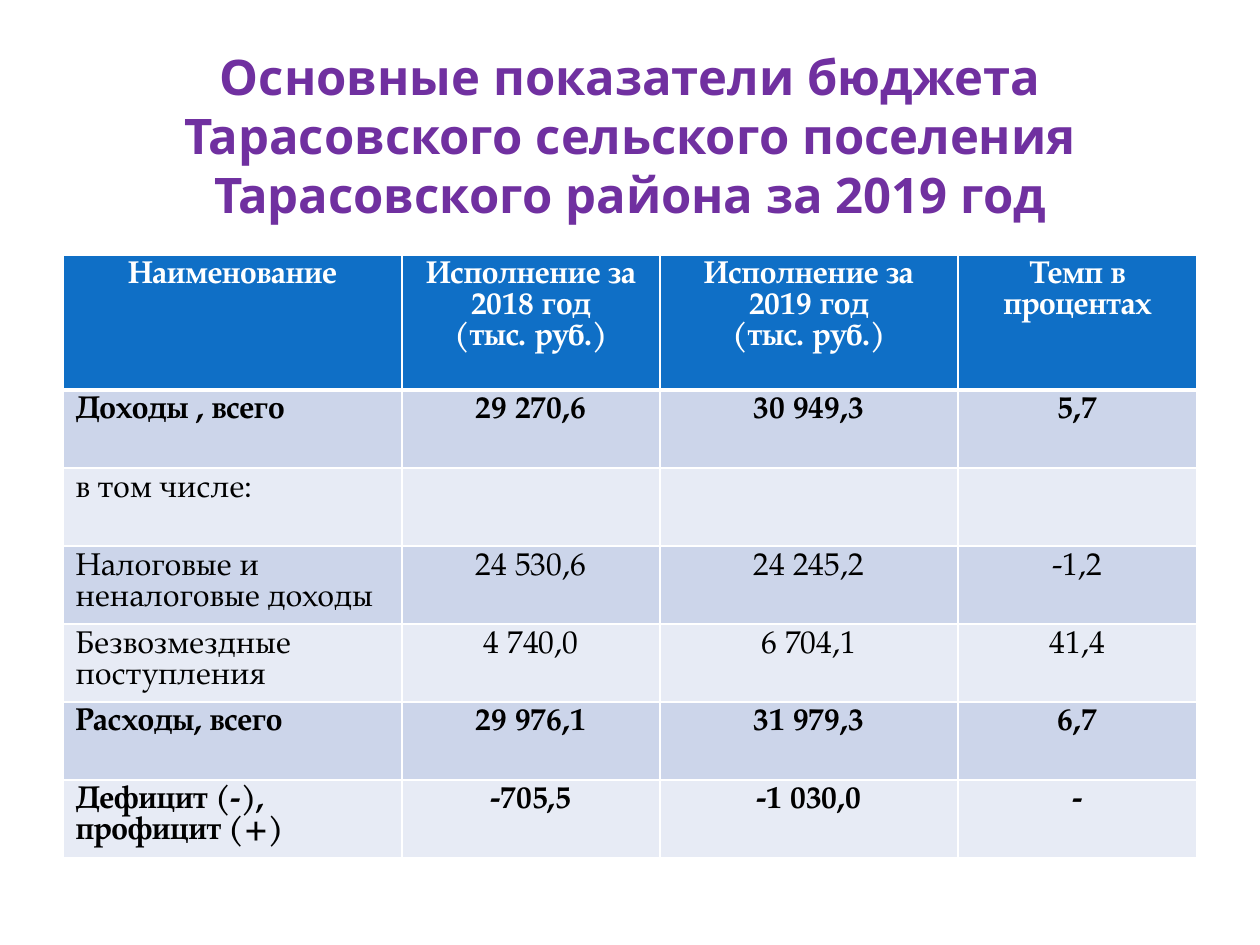
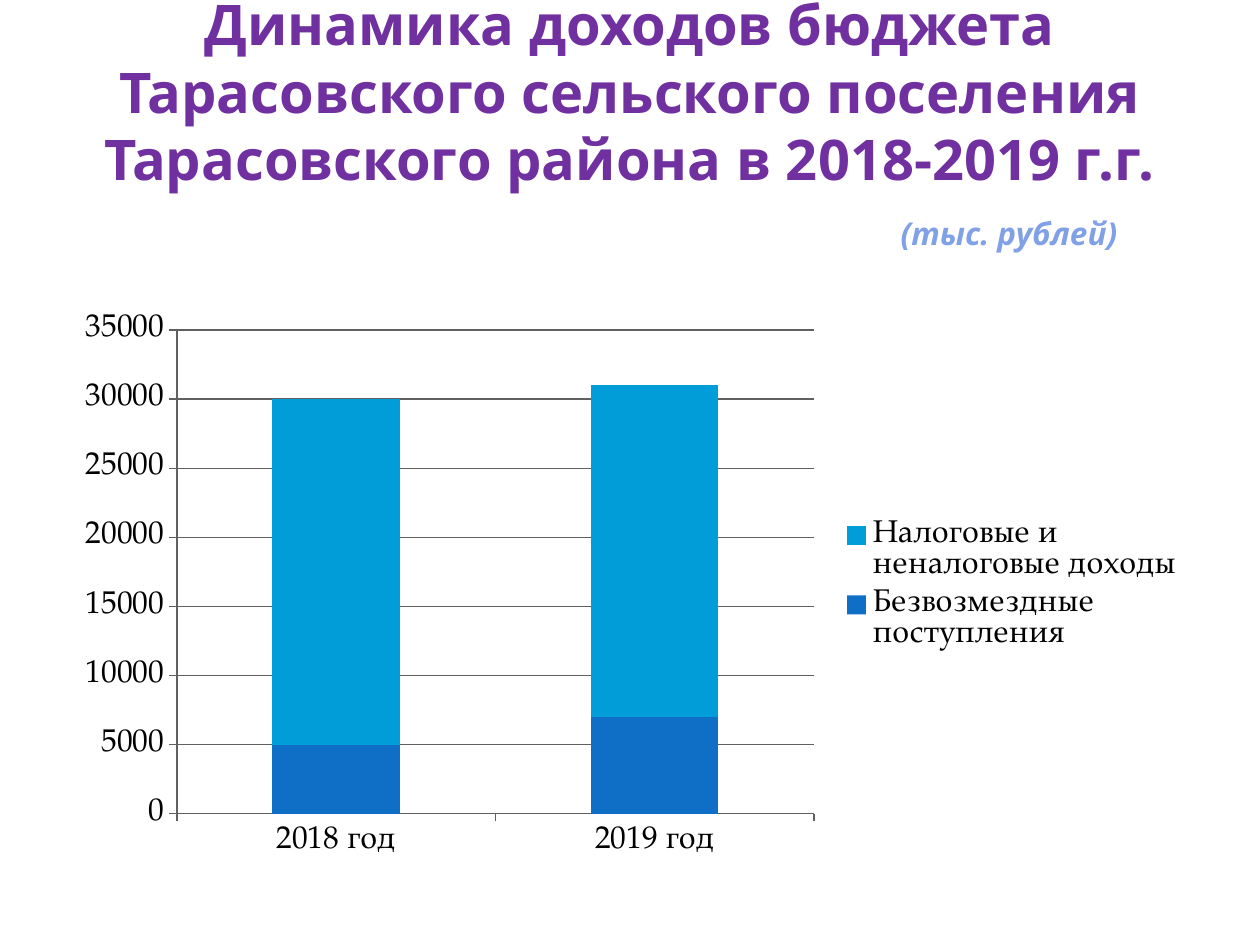
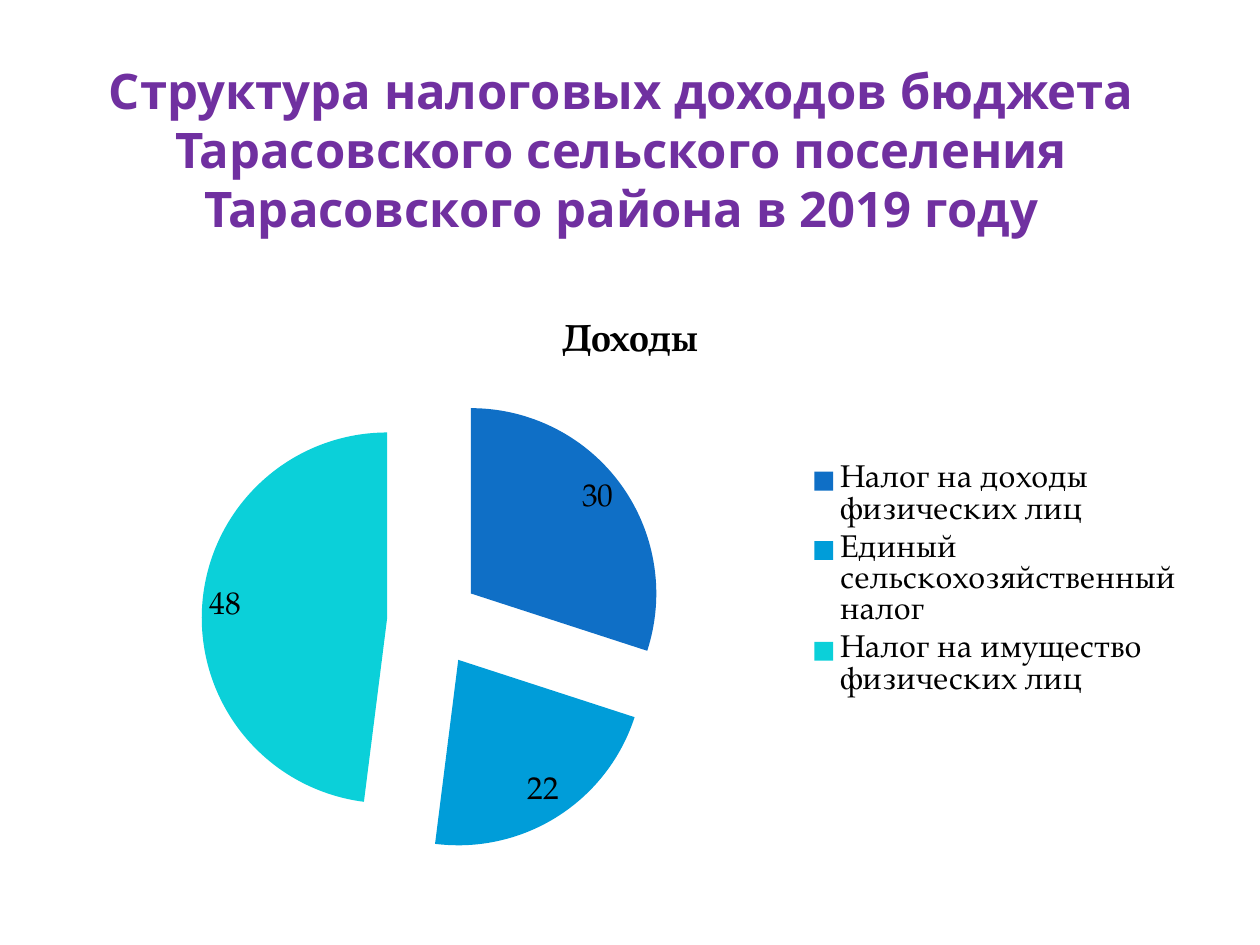
"""Builds three slides on the budget of the Tarasovskoe rural settlement."""
from lxml import etree
from pptx import Presentation
from pptx import util as u
from pptx.chart import data as chart_data
from pptx.dml.color import RGBColor
from pptx.enum import chart as ch
from pptx.enum import text
from pptx.oxml import ns

PURPLE = RGBColor(0x70, 0x30, 0xA0)
PERIWINKLE = RGBColor(0x81, 0xA1, 0xE7)
BLUE = RGBColor(0x0F, 0x6F, 0xC6)
SKY = RGBColor(0x00, 0x9D, 0xD9)
TURQUOISE = RGBColor(0x0B, 0xD0, 0xD9)
BAND_DARK = RGBColor(0xCC, 0xD5, 0xEA)
BAND_LIGHT = RGBColor(0xE7, 0xEB, 0xF5)
AXIS_GREY = RGBColor(0x60, 0x60, 0x60)
WHITE = RGBColor(0xFF, 0xFF, 0xFF)
BLACK = RGBColor(0, 0, 0)

TITLE_FONT = "Noto Sans"
BODY_FONT = "TeX Gyre Pagella"
BODY_SIZE = 18
PX_PER_INCH = 126


def px(length):
    return u.Emu(round(length * 914400 / PX_PER_INCH))


def style(font, name, size, color, bold=False, italic=False):
    font.name, font.size = name, u.Pt(size)
    font.bold, font.italic = bold, italic
    font.color.rgb = color


class Deck:
    def __init__(self):
        self.prs = Presentation()
        self.prs.slide_width, self.prs.slide_height = px(1260), px(945)
        self.slide = None

    def new_slide(self):
        self.slide = self.prs.slides.add_slide(self.prs.slide_layouts[6])

    def title(self, box, wording, size=28):
        frame = self.slide.shapes.add_textbox(*map(px, box)).text_frame
        frame.word_wrap = True
        frame.auto_size = text.MSO_AUTO_SIZE.NONE
        frame.vertical_anchor = text.MSO_ANCHOR.MIDDLE
        heading = frame.paragraphs[0]
        heading.text = wording
        heading.alignment = text.PP_ALIGN.CENTER
        style(heading.font, TITLE_FONT, size, PURPLE, bold=True)
        return frame

    def unit_note(self, frame, wording, indent, gap, bottom):
        frame.vertical_anchor = text.MSO_ANCHOR.BOTTOM
        frame.margin_bottom = px(bottom)
        note = frame.add_paragraph()
        note.text = wording
        note.alignment = text.PP_ALIGN.CENTER
        note.space_before = u.Pt(gap)
        note._p.get_or_add_pPr().set("marL", str(px(indent)))
        style(note.font, TITLE_FONT, BODY_SIZE, PERIWINKLE, bold=True, italic=True)

    def borders(self, cell, bottom):
        props = cell._tc.get_or_add_tcPr()
        for side, points in (("L", 1), ("R", 1), ("T", 1), ("B", bottom)):
            line = etree.SubElement(props, ns.qn(f"a:ln{side}"), w=str(u.Pt(points)))
            fill = etree.SubElement(line, ns.qn("a:solidFill"))
            etree.SubElement(fill, ns.qn("a:srgbClr"), val=str(WHITE))

    def table(self, left, top, widths, heights, rows, bold_rows):
        table = self.slide.shapes.add_table(
            len(rows), len(widths), px(left), px(top),
            px(sum(widths)), px(sum(heights))).table
        for column, width in zip(table.columns, widths):
            column.width = px(width)
        for r, (row, height) in enumerate(zip(rows, heights)):
            table.rows[r].height = px(height)
            header = r == 0
            band = BLUE if header else BAND_DARK if r % 2 else BAND_LIGHT
            for c, wording in enumerate(row):
                cell = table.cell(r, c)
                self.borders(cell, bottom=3 if header else 1)
                cell.fill.solid()
                cell.fill.fore_color.rgb = band
                cell.text = wording
                for paragraph in cell.text_frame.paragraphs:
                    if header or c:
                        paragraph.alignment = text.PP_ALIGN.CENTER
                    style(paragraph.font, BODY_FONT, BODY_SIZE,
                          WHITE if header else BLACK, bold=r in bold_rows)

    def chart(self, kind, box, categories, series):
        values = chart_data.CategoryChartData()
        values.categories = categories
        for name, numbers in series:
            values.add_series(name, numbers)
        chart = self.slide.shapes.add_chart(kind, *map(px, box), values).chart
        style(chart.font, BODY_FONT, BODY_SIZE, BLACK)
        chart.has_title = False
        chart.has_legend = True
        chart.legend.position = ch.XL_LEGEND_POSITION.RIGHT
        chart.legend.include_in_layout = False
        return chart

    def stacked_columns(self, box, categories, series, colors, top, step):
        chart = self.chart(ch.XL_CHART_TYPE.COLUMN_STACKED, box, categories, series)
        plot = chart.plots[0]
        plot.vary_by_categories = False
        plot.gap_width, plot.overlap = 150, 100
        for bars, color in zip(plot.series, colors):
            bars.format.fill.solid()
            bars.format.fill.fore_color.rgb = color
        amounts = chart.value_axis
        amounts.minimum_scale, amounts.maximum_scale = 0, top
        amounts.major_unit = step
        amounts.has_major_gridlines = True
        for axis in (amounts, chart.category_axis):
            axis.major_tick_mark = ch.XL_TICK_MARK.OUTSIDE
            axis.format.line.color.rgb = AXIS_GREY
        amounts.major_gridlines.format.line.color.rgb = AXIS_GREY

    def exploded_pie(self, box, name, shares, colors, explosion):
        chart = self.chart(ch.XL_CHART_TYPE.PIE, box, list(shares),
                           [(name, list(shares.values()))])
        chart.has_title = True
        heading = chart.chart_title.text_frame.paragraphs[0]
        heading.text = name
        style(heading.font, BODY_FONT, 21.6, BLACK, bold=True)
        plot = chart.plots[0]
        plot.vary_by_categories = True
        pie = plot.series[0]
        offset = etree.Element(ns.qn("c:explosion"), val=str(explosion))
        pie._element.find(ns.qn("c:tx")).addnext(offset)
        for i, color in enumerate(colors):
            slice_fill = pie.points[i].format.fill
            slice_fill.solid()
            slice_fill.fore_color.rgb = color
        plot.has_data_labels = True
        labels = plot.data_labels
        labels.show_value, labels.show_percentage = True, False
        style(labels.font, BODY_FONT, BODY_SIZE, BLACK)


def main():
    deck = Deck()

    deck.new_slide()
    deck.title((63, 26, 1134, 218),
               "Основные показатели бюджета Тарасовского сельского поселения "
               "Тарасовского района за 2019 год")
    indicators = [
        ("Наименование", "Исполнение за 2018 год\n(тыс. руб.)",
         "Исполнение за 2019 год\n(тыс. руб.)", "Темп в процентах"),
        ("Доходы , всего", "29 270,6", "30 949,3", "5,7"),
        ("в том числе:", "", "", ""),
        ("Налоговые и неналоговые доходы", "24 530,6", "24 245,2", "-1,2"),
        ("Безвозмездные поступления", "4 740,0", "6 704,1", "41,4"),
        ("Расходы, всего", "29 976,1", "31 979,3", "6,7"),
        ("Дефицит (-),\nпрофицит (+)", "-705,5", "-1 030,0", "-"),
    ]
    deck.table(63, 255, [339, 258, 298, 239], [135] + [78] * 6,
               indicators, bold_rows={0, 1, 5, 6})

    deck.new_slide()
    heading = deck.title((63, 38, 1134, 236),
                         "Динамика доходов бюджета Тарасовского сельского поселения "
                         "Тарасовского района в 2018-2019 г.г.", size=32)
    deck.unit_note(heading, "(тыс. рублей)", indent=758, gap=13, bottom=22)
    deck.stacked_columns(
        (63, 303, 1134, 566), ["2018 год", "2019 год"],
        [("Безвозмездные поступления", [5000, 7000]),
         ("Налоговые и неналоговые доходы", [25000, 24000])],
        [BLUE, SKY], top=35000, step=5000)

    deck.new_slide()
    deck.title((54, 45, 1134, 208),
               "Структура налоговых доходов бюджета Тарасовского сельского поселения "
               "Тарасовского района в 2019 году")
    deck.exploded_pie(
        (63, 294, 1134, 576), "Доходы",
        {"Налог на доходы физических лиц": 30,
         "Единый сельскохозяйственный налог": 22,
         "Налог на имущество физических лиц": 48},
        [BLUE, SKY, TURQUOISE], explosion=25)

    deck.prs.save("out.pptx")


if __name__ == "__main__":
    main()
